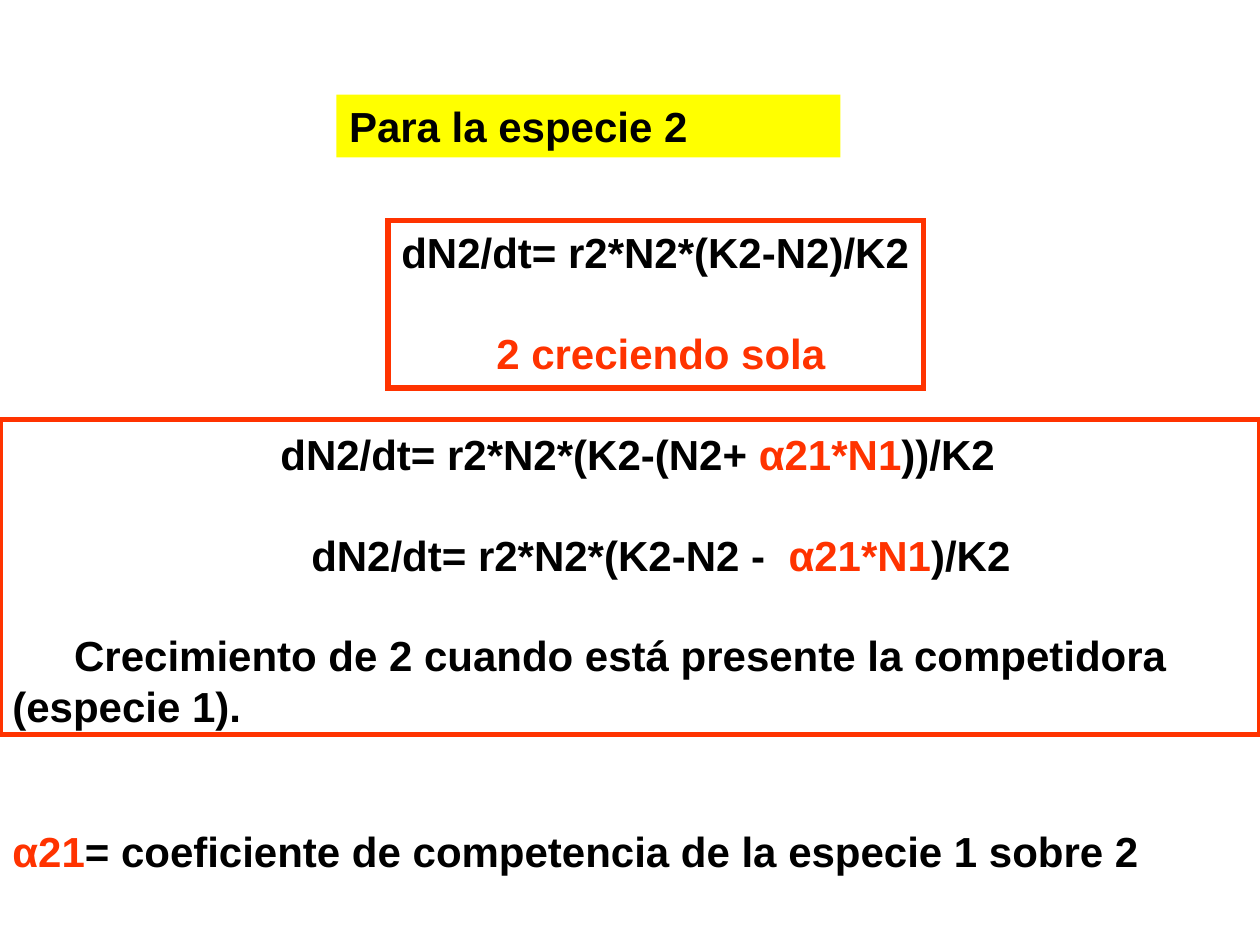
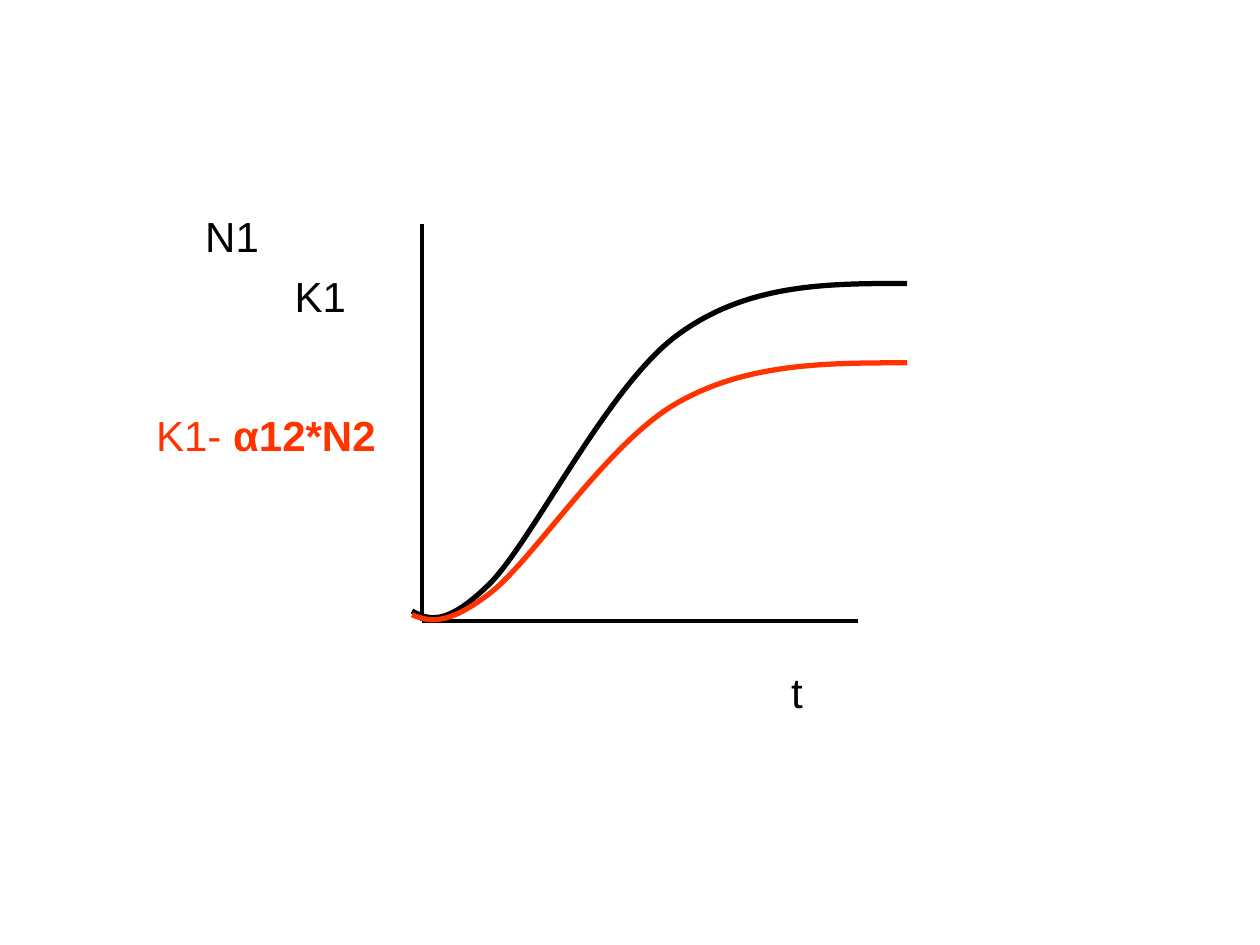
import dataclasses

import lxml.etree
import pptx
import pptx.dml.color
import pptx.enum.shapes
import pptx.enum.text
import pptx.oxml.ns
import pptx.util

Inches = pptx.util.Inches
Pt = pptx.util.Pt
RGB = pptx.dml.color.RGBColor
ALIGN = pptx.enum.text.PP_ALIGN
RECT = pptx.enum.shapes.MSO_SHAPE.RECTANGLE
qn = pptx.oxml.ns.qn


@dataclasses.dataclass(frozen=True)
class Theme:
    font: str = "Arial"
    size: float = Pt(24)
    leading: float = Pt(28.8)
    axis_width: float = Pt(2.25)
    accent_width: float = Pt(3)
    black: RGB = RGB(0, 0, 0)
    red: RGB = RGB(0xFF, 0x33, 0)
    yellow: RGB = RGB(0xFF, 0xFF, 0)
    white: RGB = RGB(0xFF, 0xFF, 0xFF)


theme = Theme()


def add_runs(p, runs, align=ALIGN.LEFT, indent=0):
    p.alignment = align
    p.line_spacing = theme.leading
    p.space_before = Pt(0)
    if indent:
        p._p.get_or_add_pPr().set("indent", str(Inches(indent)))
    for text, color, bold in runs:
        r = p.add_run()
        r.text = text
        r.font.name = theme.font
        r.font.size = theme.size
        r.font.bold = bold
        r.font.color.rgb = color


def set_frame(sp):
    tf = sp.text_frame
    tf.word_wrap = True
    tf.auto_size = pptx.enum.text.MSO_AUTO_SIZE.NONE
    tf.vertical_anchor = pptx.enum.text.MSO_ANCHOR.TOP
    return tf


prs = pptx.Presentation()
prs.slide_width = Inches(10)
prs.slide_height = Inches(7.5)

s = prs.slides.add_slide(prs.slide_layouts[5])
title = s.shapes.title
title.left, title.top, title.width, title.height = map(Inches, (2.67, 0.75, 4, 0.5))
title.fill.solid()
title.fill.fore_color.rgb = theme.yellow
add_runs(set_frame(title).paragraphs[0], [("Para la especie 2", theme.black, True)])

equations = s.shapes.add_shape(RECT, 0, Inches(1.75), Inches(10), Inches(4.09))
equations.shadow.inherit = False
equations.fill.solid()
equations.fill.fore_color.rgb = theme.white
equations.line.fill.background()
tf = set_frame(equations)
lines = [
    ([("dN2/dt= r2*N2*(K2-N2)/K2", theme.black, True)], ALIGN.CENTER, 0.4),
    ([("2 creciendo sola", theme.red, True)], ALIGN.CENTER, 0.49),
    ([("dN2/dt= r2*N2*(K2-(N2+ ", theme.black, True), ("α21*N1", theme.red, True),
      ("))/K2", theme.black, True)], ALIGN.CENTER, 0.12),
    ([("dN2/dt= r2*N2*(K2-N2 -", theme.black, True), (" ", theme.black, True),
      ("α21*N1", theme.red, True), (")/K2", theme.black, True)], ALIGN.CENTER, 0.49),
    ([("Crecimiento de 2 cuando está presente la competidora (especie 1).",
       theme.black, True)], ALIGN.LEFT, 0.49),
]
for i, (runs, align, indent) in enumerate(lines):
    p = tf.add_paragraph() if i else tf.paragraphs[0]
    add_runs(p, runs, align, indent)
    if i:
        p.space_before = theme.leading
wide_gap = tf.paragraphs[3].runs[1]
wide_gap._r.get_or_add_rPr().set("spc", "667")

for frame in [(3.08, 1.75, 4.25, 1.33), (0, 3.33, 10, 2.5)]:
    sp = s.shapes.add_shape(RECT, *map(Inches, frame))
    sp.shadow.inherit = False
    sp.fill.background()
    sp.line.color.rgb = theme.red
    sp.line.width = theme.accent_width
    lxml.etree.SubElement(sp.line._get_or_add_ln(), qn("a:miter"), lim="800000")

coefficient = s.shapes.add_textbox(0, Inches(6.5), Inches(10), Inches(0.5))
add_runs(set_frame(coefficient).paragraphs[0], [
    ("α21", theme.red, True),
    ("= coeficiente de competencia de la especie 1 sobre 2", theme.black, True),
])

s = prs.slides.add_slide(prs.slide_layouts[6])
origin = (3.35, 4.93)
for start, end in [((3.35, 1.78), origin), (origin, (6.81, 4.93))]:
    axis = s.shapes.add_connector(
        pptx.enum.shapes.MSO_CONNECTOR.STRAIGHT, *map(Inches, start + end))
    axis.line.color.rgb = theme.black
    axis.line.width = theme.axis_width
    lxml.etree.SubElement(axis._element.spPr, qn("a:effectLst"))

curve_x = [3.27, 3.4, 3.54, 3.9, 4.25, 4.84, 5.39, 5.94, 6.57, 7.2]
growth_curves = [
    (theme.black, [4.85, 4.92, 4.98, 4.62, 4.25, 3.04, 2.65, 2.25, 2.25, 2.25]),
    (theme.red, [4.88, 4.93, 4.98, 4.7, 4.42, 3.49, 3.19, 2.88, 2.88, 2.88]),
]
for color, curve_y in growth_curves:
    points = [(Inches(x), Inches(y)) for x, y in zip(curve_x, curve_y)]
    builder = s.shapes.build_freeform(*points[0])
    builder.add_line_segments(points[1:], close=False)
    curve = builder.convert_to_shape()
    segments = list(curve._element.iter(qn("a:lnTo")))
    outline = segments[0].getparent()
    for i in range(0, len(segments), 3):
        bezier = lxml.etree.SubElement(outline, qn("a:cubicBezTo"))
        for segment in segments[i:i + 3]:
            bezier.append(segment[0])
            outline.remove(segment)
    curve.shadow.inherit = False
    curve.fill.background()
    curve.line.color.rgb = color
    curve.line.width = theme.accent_width

labels = [
    (1.53, 1.62, 1.02, [("N1", theme.black, False)]),
    (6.18, 5.24, 0.55, [("t", theme.black, False)]),
    (2.24, 2.1, 0.87, [("K1", theme.black, False)]),
    (1.14, 3.2, 2.05, [("K1- ", theme.red, False), ("α12*N2", theme.red, True)]),
]
for left, top, width, runs in labels:
    label = s.shapes.add_textbox(*map(Inches, (left, top, width, 0.5)))
    add_runs(set_frame(label).paragraphs[0], runs)

prs.save("out.pptx")
